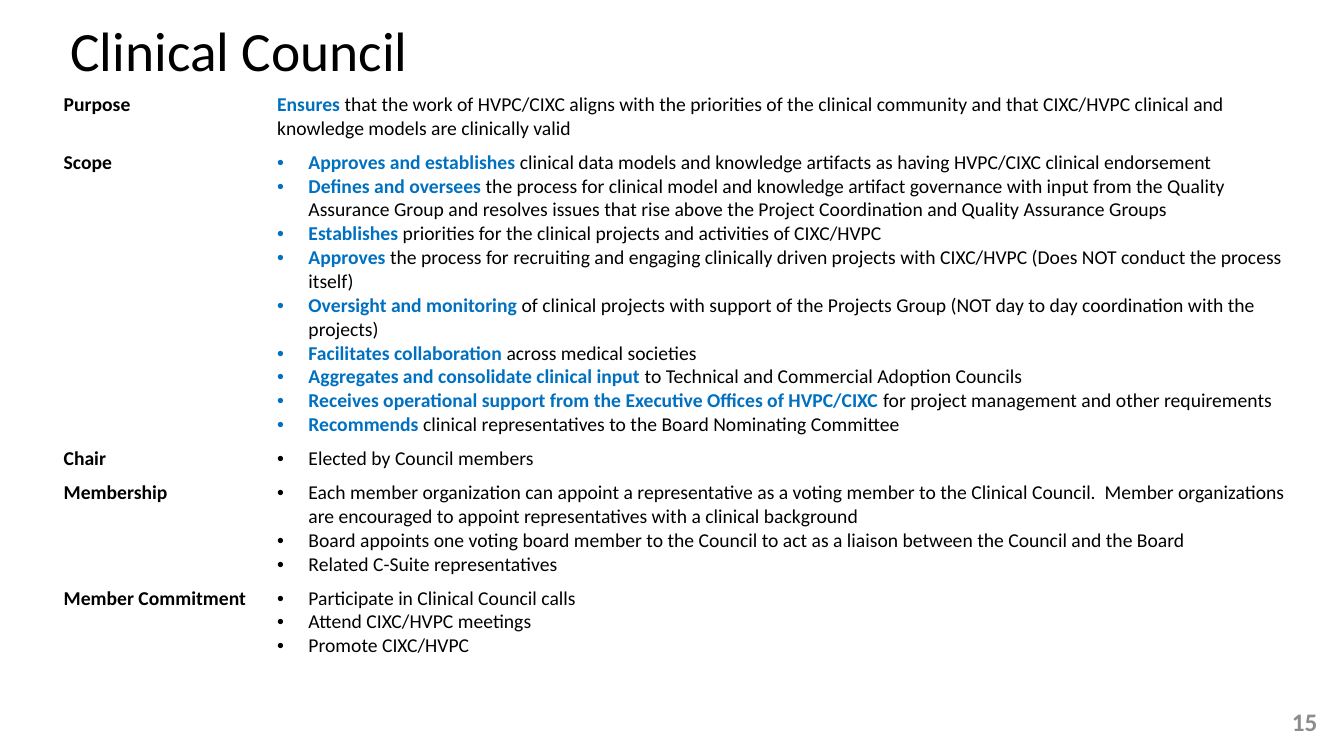
from lxml.etree import SubElement
from pptx import Presentation
from pptx.dml.color import RGBColor as Rgb
from pptx.enum.text import MSO_ANCHOR as Anchor, MSO_AUTO_SIZE as Fit, PP_ALIGN as Align
from pptx.oxml.ns import qn
from pptx.util import Cm, Pt

HUES = {"ink": "000000", "key": "0070C0", "page": "8C8C8C"}
COLS = [5.38, 26.09]
INDENT = Cm(0.79)
ROWS = [
    ("Purpose", 1.17, False, [
        ("Ensures ", "that the work of HVPC/CIXC aligns with the priorities of the clinical "
         "community and that CIXC/HVPC clinical and knowledge models are clinically valid"),
    ]),
    ("Scope", 6.38, True, [
        ("Approves and establishes", " clinical data models and knowledge artifacts as having "
         "HVPC/CIXC clinical endorsement"),
        ("Defines and oversees ", "the process for clinical model and knowledge artifact governance "
         "with input from the Quality Assurance Group and resolves issues that rise above the "
         "Project Coordination and Quality Assurance Groups"),
        ("Establishes", " priorities for the clinical projects and activities of CIXC/HVPC"),
        ("Approves ", "the process for recruiting and engaging clinically driven projects with "
         "CIXC/HVPC (Does NOT conduct the process itself)"),
        ("Oversight and monitoring ", "of clinical projects with support of the Projects Group "
         "(NOT day to day coordination with the projects)"),
        ("Facilitates collaboration ", "across medical societies"),
        ("Aggregates and consolidate clinical input ",
         "to Technical and Commercial Adoption Councils"),
        ("Receives operational support from the Executive Offices of HVPC/CIXC ",
         "for project management and other requirements"),
        ("Recommends", " clinical representatives to the Board Nominating Committee"),
    ]),
    ("Chair", 0.76, True, [("", "Elected by Council members")]),
    ("Membership", 2.54, True, [
        ("", "Each member organization can appoint a representative as a voting member to the "
         "Clinical Council.  Member organizations are encouraged to appoint representatives "
         "with a clinical background"),
        ("", "Board appoints one voting board member to the Council to act as a liaison between "
         "the Council and the Board"),
        ("", "Related C-Suite representatives"),
    ]),
    ("Member Commitment", 2.29, True, [
        ("", "Participate in Clinical Council calls"),
        ("", "Attend CIXC/HVPC meetings"),
        ("", "Promote CIXC/HVPC"),
    ]),
]


def add_run(para, text, size=14, hue="ink", bold=False):
    """Add one formatted run to a paragraph."""
    run = para.add_run()
    run.text = text
    style = {"name": "Calibri", "size": Pt(size), "bold": bold}
    for name, value in style.items():
        setattr(run.font, name, value)
    run.font.color.rgb = Rgb.from_string(HUES[hue])


def add_bullet(para):
    """Give a paragraph a round bullet with a hanging indent."""
    props = para._p.get_or_add_pPr()
    props.set("marL", str(INDENT))
    props.set("indent", str(-INDENT))
    SubElement(props, qn("a:buFont")).set("typeface", "Arial")
    SubElement(props, qn("a:buChar")).set("char", "•")


def set_frame(frame):
    """Centre a text frame vertically at a fixed size."""
    style = {"word_wrap": True, "auto_size": Fit.NONE, "vertical_anchor": Anchor.MIDDLE}
    for name, value in style.items():
        setattr(frame, name, value)


def set_title(slide, text):
    """Place and fill the title."""
    title = slide.shapes.title
    place = {"left": Cm(1.52), "top": Cm(0.53), "width": Cm(30.02), "height": Cm(1.65)}
    for name, value in place.items():
        setattr(title, name, value)
    set_frame(title.text_frame)
    para = title.text_frame.paragraphs[0]
    para.alignment = Align.LEFT
    para.line_spacing = 0.9
    add_run(para, text, 39.6)


def fill_cell(cell, items, dots):
    """Write key words and details, one item a paragraph."""
    frame = cell.text_frame
    for num, (key, rest) in enumerate(items):
        para = frame.add_paragraph() if num else frame.paragraphs[0]
        if dots:
            add_bullet(para)
        if key:
            add_run(para, key, hue="key", bold=True)
        add_run(para, rest)


def add_grid(slide):
    """Add the table of council duties."""
    high = sum(row[1] for row in ROWS)
    frame = slide.shapes.add_table(
        len(ROWS), len(COLS), Cm(1.35), Cm(2.21), Cm(sum(COLS)), Cm(high))
    table = frame.table
    table.horz_banding = False
    for col, wide in zip(table.columns, COLS):
        col.width = Cm(wide)
    for row, (label, tall, dots, items) in zip(table.rows, ROWS):
        row.height = Cm(tall)
        head, body = row.cells
        for cell in (head, body):
            cell.fill.background()
        add_run(head.text_frame.paragraphs[0], label, bold=True)
        fill_cell(body, items, dots)


def add_page(slide, text):
    """Add the page number at the lower right."""
    box = slide.shapes.add_textbox(Cm(25.83), Cm(17.68), Cm(7.62), Cm(1.02))
    set_frame(box.text_frame)
    para = box.text_frame.paragraphs[0]
    para.alignment = Align.RIGHT
    add_run(para, text, 18, "page", True)


def main():
    """Build and save the slide."""
    deck = Presentation()
    deck.slide_width, deck.slide_height = Cm(33.87), Cm(19.05)
    slide = deck.slides.add_slide(deck.slide_layouts.get_by_name("Title Only"))
    set_title(slide, "Clinical Council")
    add_grid(slide)
    add_page(slide, "15")
    deck.save("out.pptx")


if __name__ == "__main__":
    main()
